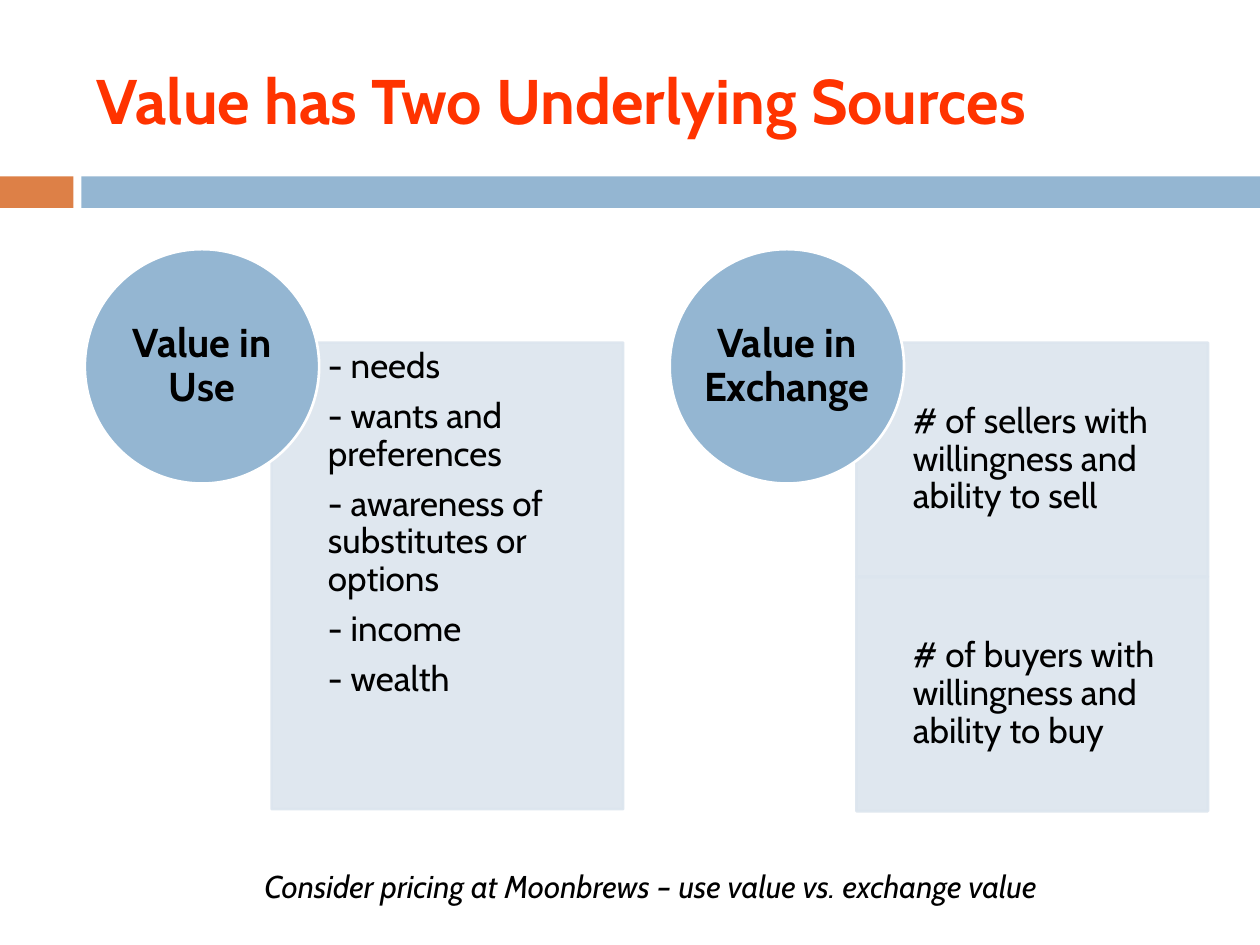
from pptx import Presentation
from pptx.dml.color import RGBColor
from pptx.enum.shapes import MSO_SHAPE as Kind
from pptx.enum.text import MSO_ANCHOR as Anchor, PP_ALIGN as Align
from pptx.oxml.xmlchemy import OxmlElement as Node
from pptx.util import Pt

RED = RGBColor(0xFF, 0x33, 0x00)
ORANGE = RGBColor(0xDD, 0x80, 0x47)
BLUE = RGBColor(0x94, 0xB6, 0xD2)
PALE = RGBColor(0xDC, 0xE5, 0xEE)
WHITE = RGBColor(0xFF, 0xFF, 0xFF)
BLACK = RGBColor(0x00, 0x00, 0x00)


def write(shape, lines, size, color=BLACK, bold=False, italic=False,
          align=Align.LEFT, anchor=Anchor.MIDDLE, inset=(7.2, 3.6, 7.2, 3.6),
          spacing=None, after=0):
    frame = shape.text_frame
    frame.word_wrap = True
    frame.vertical_anchor = anchor
    frame.margin_left, frame.margin_top, frame.margin_right, frame.margin_bottom = map(Pt, inset)
    frame.text = "\n".join(lines)
    for para in frame.paragraphs:
        para.alignment = align
        para.line_spacing = spacing
        para.space_after = Pt(after)
        font = para.runs[0].font
        font.name, font.size = "Cabin", Pt(size)
        font.bold, font.italic = bold, italic
        font.color.rgb = color


def draw(kind, box, fill, line=None, alpha=None):
    shape = slide.shapes.add_shape(kind, *map(Pt, box))
    shape.shadow.inherit = False
    shape.fill.solid()
    shape.fill.fore_color.rgb = fill
    if line is None:
        shape.line.fill.background()
    else:
        shape.line.color.rgb = line
        shape.line.width = Pt(1.5)
    if alpha:
        for color in shape._element.spPr.xpath(".//a:srgbClr"):
            node = Node("a:alpha")
            node.set("val", str(alpha * 1000))
            color.append(node)
    return shape


deck = Presentation()
deck.slide_width, deck.slide_height = Pt(720), Pt(540)
slide = deck.slides.add_slide(deck.slide_layouts[5])

# Band below the title
draw(Kind.RECTANGLE, (0, 100.8, 42, 18), ORANGE)
draw(Kind.RECTANGLE, (46.5, 100.8, 673.5, 18), BLUE)

# Title
title = slide.shapes.title
title.left, title.top, title.width, title.height = map(Pt, (48, 18, 642, 78))
write(title, ["Value has Two Underlying Sources"], 36, color=RED, bold=True)

# Two sources: left edge, heading, panel height, panels of lines
sources = [
    (48.5, "Value in Use", 266.6, [
        ["- needs", "- wants and preferences",
         "- awareness of substitutes or options", "- income", "- wealth"]]),
    (382.7, "Value in Exchange", 133.9, [
        ["# of sellers with willingness and ability to sell"],
        ["# of buyers with willingness and ability to buy"]]),
]
for left, head, height, panels in sources:
    for row, lines in enumerate(panels):
        box = (left + 106.7, 195.8 + row * height, 200.9, height)
        panel = draw(Kind.RECTANGLE, box, PALE, line=PALE, alpha=90)
        is_list = len(lines) > 1
        write(panel, lines, 20, spacing=0.9, after=7,
              anchor=Anchor.TOP if is_list else Anchor.MIDDLE,
              inset=(32.2, 3 if is_list else 11.5, 11.5, 11.5))
    disc = draw(Kind.OVAL, (left, 142.4, 133.9, 133.9), BLUE, line=WHITE)
    write(disc, [head], 23, bold=True, align=Align.CENTER,
          inset=(0, 0, 0, 0), spacing=0.9, after=8)

# Closing remark
note = slide.shapes.add_textbox(Pt(144), Pt(492), Pt(522), Pt(29))
write(note, ["Consider pricing at Moonbrews – use value vs. exchange value"], 18,
      italic=True, anchor=Anchor.TOP)

deck.save("out.pptx")
